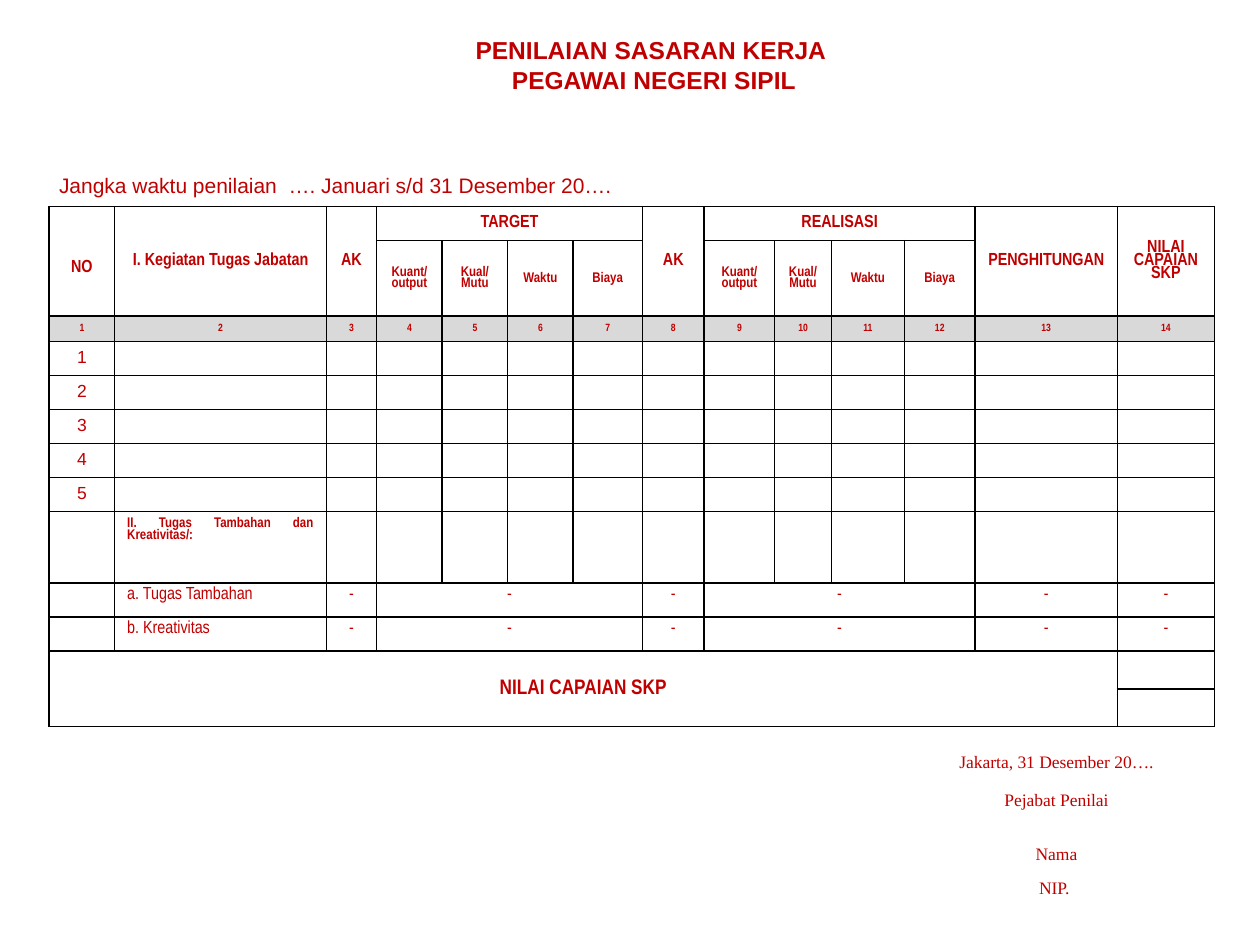
from dataclasses import dataclass

from lxml import etree
from pptx import Presentation
from pptx.dml.color import RGBColor
from pptx.enum.text import MSO_ANCHOR, PP_ALIGN
from pptx.oxml import ns
from pptx.util import Inches, Pt


@dataclass(frozen=True)
class Theme:
    ink: str = "C00000"
    rule: str = "000000"
    band: str = "D9D9D9"
    sans: str = "Arial"
    narrow: str = "Arial Narrow"
    serif: str = "Times New Roman"
    title: int = 14
    lead: int = 12
    body: int = 10
    small: int = 8
    tiny: int = 6


THEME = Theme()
PLAIN_TABLE = "{2D5ABB26-0587-4C30-8999-92F81FD0307C}"
FORM_COLUMNS = [0.52, 1.68, 0.4, 0.52, 0.52, 0.52, 0.55,
                0.49, 0.56, 0.45, 0.58, 0.56, 1.13, 0.77]
FORM_ROWS = [0.27, 0.6, 0.2] + [0.27] * 5 + [0.57, 0.27, 0.27, 0.3, 0.3]
TARGET, REALISASI = 3, 8
MEASURES = ["Kuant/ output", "Kual/ Mutu", "Waktu", "Biaya"]
TASK_COUNT = 5


def write(frame, lines, size, font=THEME.narrow, bold=False,
          align=PP_ALIGN.CENTER, spacing=1.0):
    for index, line in enumerate(lines):
        paragraph = frame.paragraphs[0] if index == 0 else frame.add_paragraph()
        paragraph.alignment = align
        paragraph.line_spacing = spacing
        run = paragraph.add_run()
        run.text = line
        run.font.size = Pt(size)
        run.font.name = font
        run.font.bold = bold
        run.font.color.rgb = RGBColor.from_string(THEME.ink)


def rule_cell(cell):
    properties = cell._tc.get_or_add_tcPr()
    for side in ("a:lnL", "a:lnR", "a:lnT", "a:lnB"):
        line = etree.SubElement(properties, ns.qn(side), w=str(Pt(1)))
        solid = etree.SubElement(line, ns.qn("a:solidFill"))
        etree.SubElement(solid, ns.qn("a:srgbClr"), val=THEME.rule)


def add_grid(slide, left, top, columns, rows, ruled):
    """Add an unstyled table whose empty cells do not stretch their rows."""
    frame = slide.shapes.add_table(
        len(rows), len(columns), Inches(left), Inches(top),
        Inches(sum(columns)), Inches(sum(rows)))
    table = frame.table
    table.first_row = table.horz_banding = False
    table._tbl.tblPr.find(ns.qn("a:tableStyleId")).text = PLAIN_TABLE
    for column, width in zip(table.columns, columns):
        column.width = Inches(width)
    for row, height in zip(table.rows, rows):
        row.height = Inches(height)
    for cell in table.iter_cells():
        if ruled:
            rule_cell(cell)
        cell.fill.background()
        end = cell.text_frame.paragraphs[0]._p.get_or_add_endParaRPr()
        end.set("sz", str(THEME.small * 100))
    return table


def fill_cell(table, row, column, *lines, span=(1, 1), size=THEME.body,
              middle=False, **style):
    cell = table.cell(row, column)
    if span != (1, 1):
        cell.merge(table.cell(row + span[0] - 1, column + span[1] - 1))
    if middle:
        cell.vertical_anchor = MSO_ANCHOR.MIDDLE
    write(cell.text_frame, lines, size, **style)
    return cell


def fill_header(table):
    heading = dict(bold=True, middle=True, spacing=0.8)
    number = fill_cell(table, 0, 0, "NO", span=(2, 1), **heading)
    number.margin_top = Inches(0.17)
    tall_headings = {
        1: ["I. Kegiatan Tugas Jabatan"], 2: ["AK"], 7: ["AK"],
        12: ["PENGHITUNGAN"], 13: ["NILAI", "CAPAIAN", "SKP"]}
    for column, lines in tall_headings.items():
        fill_cell(table, 0, column, *lines, span=(2, 1), **heading)
    for start, group in ((TARGET, "TARGET"), (REALISASI, "REALISASI")):
        fill_cell(table, 0, start, group, span=(1, 4), **heading)
        for offset, measure in enumerate(MEASURES):
            fill_cell(table, 1, start + offset, measure, size=THEME.small,
                      bold=True, middle=True, spacing=0.9)
    for column in range(len(FORM_COLUMNS)):
        cell = fill_cell(table, 2, column, str(column + 1), size=THEME.tiny,
                         bold=True, middle=True)
        cell.fill.solid()
        cell.fill.fore_color.rgb = RGBColor.from_string(THEME.band)


def fill_tasks(table):
    for task in range(1, TASK_COUNT + 1):
        fill_cell(table, 2 + task, 0, str(task), font=THEME.sans)
    fill_cell(table, 8, 1, "II. Tugas Tambahan dan Kreativitas/:",
              size=THEME.small, bold=True, align=PP_ALIGN.JUSTIFY, spacing=0.9)
    for row, extra in ((9, "a. Tugas Tambahan"), (10, "b. Kreativitas")):
        fill_cell(table, row, 1, extra, align=PP_ALIGN.JUSTIFY, spacing=0.8)
        for column in (2, TARGET, 7, REALISASI, 12, 13):
            width = 4 if column in (TARGET, REALISASI) else 1
            fill_cell(table, row, column, "-", span=(1, width), spacing=0.8)


def add_assessment_form(slide, left, top):
    table = add_grid(slide, left, top, FORM_COLUMNS, FORM_ROWS, ruled=True)
    fill_header(table)
    fill_tasks(table)
    fill_cell(table, 11, 0, "NILAI CAPAIAN SKP", span=(2, 13),
              size=THEME.lead, bold=True, middle=True)


def add_signature(slide, left, top):
    table = add_grid(slide, left, top, [3.5, 2.75],
                     [0.3, 0.43, 0.27, 0.27], ruled=False)
    signature = ["Jakarta, 31 Desember 20….", "Pejabat Penilai", "Nama", "NIP. "]
    for row, line in enumerate(signature):
        fill_cell(table, row, 1, line, font=THEME.serif)


def place(shape, left, top, width, height):
    shape.left, shape.top = Inches(left), Inches(top)
    shape.width, shape.height = Inches(width), Inches(height)


def set_title(slide, *box):
    title = slide.shapes.title
    place(title, *box)
    frame = title.text_frame
    frame.word_wrap = False
    frame.vertical_anchor = MSO_ANCHOR.MIDDLE
    write(frame, ["PENILAIAN SASARAN KERJA ", "PEGAWAI NEGERI SIPIL"],
          THEME.title, font=THEME.sans, bold=True)


def add_period(slide, *box):
    period = slide.shapes.add_textbox(*map(Inches, box))
    period.text_frame.word_wrap = True
    write(period.text_frame,
          ["Jangka waktu penilaian  …. Januari s/d 31 Desember 20…."],
          THEME.lead, font=THEME.sans, align=PP_ALIGN.LEFT)


def main():
    deck = Presentation()
    deck.slide_width, deck.slide_height = Inches(10), Inches(7.5)
    slide = deck.slides.add_slide(deck.slide_layouts[5])
    set_title(slide, 3.66, 0.23, 3.06, 0.57)
    add_period(slide, 0.37, 1.32, 4.79, 0.3)
    add_assessment_form(slide, 0.39, 1.64)
    add_signature(slide, 3.51, 5.93)
    deck.save("out.pptx")


if __name__ == "__main__":
    main()
